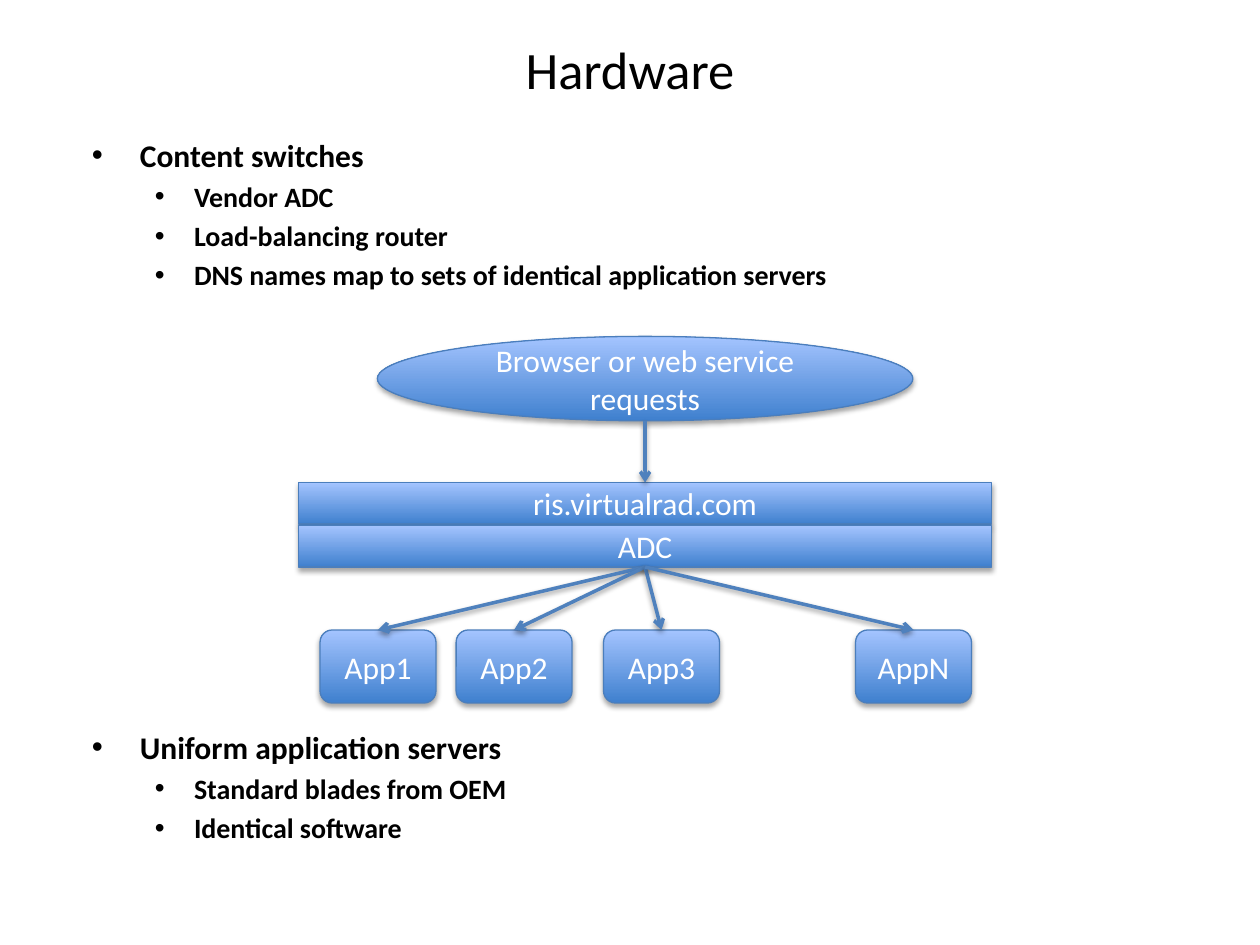
from lxml.etree import SubElement
from pptx import Presentation
from pptx.dml.color import RGBColor
from pptx.enum.shapes import MSO_CONNECTOR as Connector, MSO_SHAPE as Shape
from pptx.enum.text import MSO_ANCHOR as Anchor, MSO_AUTO_SIZE as AutoSize, PP_ALIGN as Align
from pptx.oxml.ns import qn
from pptx.util import Inches, Pt

TITLE = "Hardware"
BULLETS = [
    (0, "Content switches", 0),
    (1, "Vendor ADC", 3.2),
    (1, "Load-balancing router", 3.2),
    (1, "DNS names map to sets of identical application servers", 3.2),
    (0, "Uniform application servers", 249.5),
    (1, "Standard blades from OEM", 3.2),
    (1, "Identical software", 3.2),
]
REQUESTS = "Browser or web service requests"
BARS = ["ris.virtualrad.com", "ADC"]
APPS = [("App1", 2.54), ("App2", 3.62), ("App3", 4.79), ("AppN", 6.79)]

THEME = {
    "font": "Calibri",
    "title_size": 30,
    "level_sizes": [18, 16],
    "level_indents": [(0.38, -0.38), (0.81, -0.31)],
    "label_size": 18,
    "text": "000000",
    "label": "FFFFFF",
    "gradient": ["3F80CE", "A4C4FF"],
    "outline": "4B7EBC",
    "arrow": "4F81BD",
    "shadow": "000000",
}
CENTER = 5.12
REQUEST_TOP, REQUEST_WIDTH, REQUEST_HEIGHT = 2.67, 4.25, 0.67
BAR_TOP, BAR_WIDTH, BAR_HEIGHT = 3.83, 5.5, 0.33
BAR_PITCH = 0.34
APP_TOP, APP_WIDTH, APP_HEIGHT = 5, 0.92, 0.58


def color(name):
    return RGBColor.from_string(name)


def set_font(font, size, fill, bold=False):
    values = {"name": THEME["font"], "size": Pt(size), "bold": bold}
    for key, value in values.items():
        setattr(font, key, value)
    font.color.rgb = color(fill)


def place(item, left, top, width, height):
    values = {"left": left, "top": top, "width": width, "height": height}
    for key, value in values.items():
        setattr(item, key, Inches(value))


def add_shadow(effects, distance, opacity):
    values = {"blurRad": Pt(3.1), "dist": Pt(distance), "dir": 5400000, "rotWithShape": 0}
    shadow = SubElement(effects, qn("a:outerShdw"), {key: str(value) for key, value in values.items()})
    shade = SubElement(shadow, qn("a:srgbClr"), val=THEME["shadow"])
    SubElement(shade, qn("a:alpha"), val=str(opacity * 1000))


def add_box(slide, kind, label, left, top, width, height):
    box = slide.shapes.add_shape(kind, *map(Inches, (left, top, width, height)))
    box.fill.gradient()
    box.fill.gradient_angle = 90
    for stop, shade in zip(box.fill.gradient_stops, THEME["gradient"]):
        stop.color.rgb = color(shade)
    box.line.color.rgb = color(THEME["outline"])
    box.line.width = Pt(0.75)
    box.shadow.inherit = False
    add_shadow(box._element.spPr.find(qn("a:effectLst")), 1.8, 35)
    frame = box.text_frame
    frame.word_wrap = True
    frame.vertical_anchor = Anchor.MIDDLE
    para = frame.paragraphs[0]
    para.text = label
    para.alignment = Align.CENTER
    set_font(para.font, THEME["label_size"], THEME["label"])
    return box


def add_arrow(slide, start_top, target, source=None):
    end = target.left + target.width // 2, target.top
    arrow = slide.shapes.add_connector(Connector.STRAIGHT, Inches(CENTER), Inches(start_top), *end)
    if source:
        arrow.begin_connect(source, 2)
    arrow.end_connect(target, 0)
    arrow.line.color.rgb = color(THEME["arrow"])
    arrow.line.width = Pt(2)
    SubElement(arrow.line._get_or_add_ln(), qn("a:tailEnd"), type="arrow")
    effects = SubElement(arrow._element.spPr, qn("a:effectLst"))
    add_shadow(effects, 1.6, 38)


def fill_title(title):
    place(title, 0, 0.17, 10, 0.75)
    frame = title.text_frame
    frame.vertical_anchor = Anchor.MIDDLE
    frame.text = TITLE
    para = frame.paragraphs[0]
    para.alignment = Align.CENTER
    set_font(para.font, THEME["title_size"], THEME["text"])


def fill_body(body):
    place(body, 0.63, 1.03, 9, 5.97)
    frame = body.text_frame
    frame.auto_size = AutoSize.NONE
    frame.word_wrap = True
    for index, (level, text, gap) in enumerate(BULLETS):
        para = frame.add_paragraph() if index else frame.paragraphs[0]
        para.text = text
        para.level = level
        para.space_before = Pt(gap)
        margin, indent = THEME["level_indents"][level]
        properties = para._p.get_or_add_pPr()
        properties.set("marL", str(Inches(margin)))
        properties.set("indent", str(Inches(indent)))
        SubElement(properties, qn("a:buFont"), typeface="Arial")
        SubElement(properties, qn("a:buChar"), char="•")
        set_font(para.font, THEME["level_sizes"][level], THEME["text"], True)


def main():
    deck = Presentation()
    deck.slide_width, deck.slide_height = Inches(10), Inches(7.5)
    slide = deck.slides.add_slide(deck.slide_layouts[1])
    fill_title(slide.shapes.title)
    fill_body(slide.placeholders[1])

    bars = [
        add_box(slide, Shape.RECTANGLE, label, CENTER - BAR_WIDTH / 2,
                BAR_TOP + row * BAR_PITCH, BAR_WIDTH, BAR_HEIGHT)
        for row, label in enumerate(BARS)
    ]
    apps = [
        add_box(slide, Shape.ROUNDED_RECTANGLE, label, left, APP_TOP, APP_WIDTH, APP_HEIGHT)
        for label, left in APPS
    ]
    for app in apps:
        add_arrow(slide, BAR_TOP + BAR_PITCH + BAR_HEIGHT, app, bars[-1])
    add_box(slide, Shape.OVAL, REQUESTS, CENTER - REQUEST_WIDTH / 2,
            REQUEST_TOP, REQUEST_WIDTH, REQUEST_HEIGHT)
    add_arrow(slide, REQUEST_TOP + REQUEST_HEIGHT, bars[0])
    deck.save("out.pptx")


if __name__ == "__main__":
    main()
